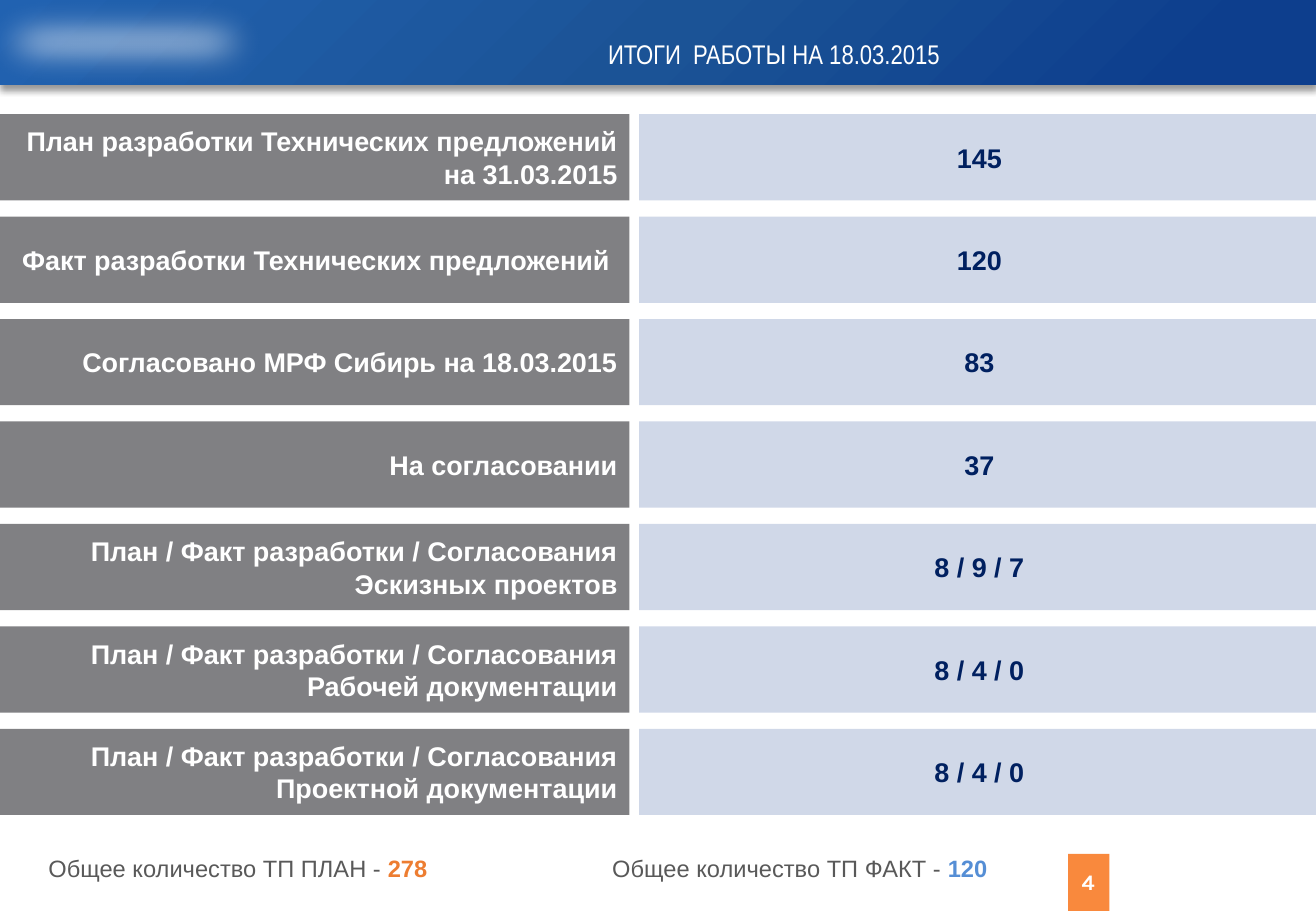
from lxml import etree
from pptx import Presentation
from pptx.dml.color import RGBColor as Rgb
from pptx.enum.shapes import MSO_SHAPE as Shape
from pptx.enum.text import MSO_ANCHOR as Anchor, MSO_AUTO_SIZE as Auto, PP_ALIGN as Align
from pptx.oxml import parse_xml
from pptx.util import Inches, Pt

NS = 'xmlns:a="http://schemas.openxmlformats.org/drawingml/2006/main"'
COLORS = {
    "white": "FFFFFF", "gray": "808083", "pale": "D0D8E8", "navy": "002060",
    "text": "595959", "orange": "ED7D31", "sky": "558ED5", "badge": "F9893D",
    "deep": "0D3E8D", "mid": "1B5396", "light": "2162B1",
}
ROWS = [
    ("План разработки Технических предложений на 31.03.2015", "145"),
    ("Факт разработки Технических предложений ", "120"),
    ("Согласовано МРФ Сибирь на 18.03.2015", "83"),
    ("На согласовании", "37"),
    ("План / Факт разработки / Согласования Эскизных проектов", "8 / 9 / 7"),
    ("План / Факт разработки / Согласования Рабочей документации", "8 / 4 / 0"),
    ("План / Факт разработки / Согласования Проектной документации", "8 / 4 / 0"),
]


def style(run, size, color, bold=False, face="Arial"):
    """Format one run."""
    font = run.font
    font.size, font.bold, font.name = Pt(size), bold, face
    font.color.rgb = Rgb.from_string(COLORS[color])


def add_rect(slide, box, color):
    """Add a plain filled rectangle."""
    rect = slide.shapes.add_shape(Shape.RECTANGLE, *map(Inches, box))
    rect.shadow.inherit = False
    rect.fill.solid()
    rect.fill.fore_color.rgb = Rgb.from_string(COLORS[color])
    rect.line.fill.background()
    return rect


def add_text(slide, box, text, align, *look):
    """Add a text box with one run."""
    label = slide.shapes.add_textbox(*map(Inches, box))
    para = label.text_frame.paragraphs[0]
    para.text, para.alignment = text, align
    style(para.runs[0], *look)
    return label


def set_effect(shape, xml):
    """Put an effect on a shape."""
    effects = shape._element.spPr.find("{*}effectLst")
    effects.append(parse_xml(xml))


def add_header(slide, box):
    """Draw the gradient band with its soft glow and title."""
    left, top, width, height = box
    band = add_rect(slide, box, "deep")
    stops = "".join(
        f'<a:gs pos="{pos}000"><a:srgbClr val="{COLORS[name]}"/></a:gs>'
        for pos, name in ((9, "deep"), (50, "mid"), (100, "light")))
    props = band._element.spPr
    props.replace(props.find("{*}solidFill"), parse_xml(
        f'<a:gradFill {NS} rotWithShape="1"><a:gsLst>{stops}</a:gsLst>'
        '<a:path path="circle"><a:fillToRect l="100000" t="100000"/></a:path></a:gradFill>'))
    set_effect(band, f'<a:outerShdw {NS} blurRad="{Pt(4)}" dist="{Pt(3)}" dir="5400000" '
               'algn="t" rotWithShape="0"><a:srgbClr val="000000"><a:alpha val="40000"/>'
               '</a:srgbClr></a:outerShdw>')
    glow = add_rect(slide, (left - 0.33, top - 0.14, 2.71, height + 0.28), "white")
    set_effect(glow, f'<a:softEdge {NS} rad="{Inches(0.35)}"/>')
    title = add_text(slide, (left + 2.31, top, 8.12, height - 0.07),
                     "ИТОГИ  РАБОТЫ НА 18.03.2015", Align.CENTER, 16, "white", False,
                     "Arial Narrow")
    frame = title.text_frame
    frame.word_wrap, frame.vertical_anchor = True, Anchor.BOTTOM
    frame.paragraphs[0].line_spacing = 0.9


def add_bar(slide, box, text, fill, color, align):
    """Draw one filled bar with bold text."""
    bar = add_rect(slide, box, fill)
    frame = bar.text_frame
    frame.text = text
    frame.word_wrap, frame.vertical_anchor = True, Anchor.MIDDLE
    frame.paragraphs[0].alignment = align
    style(frame.paragraphs[0].runs[0], 16, color, True)


def add_rows(slide, box):
    """Draw the label and value bars at an equal pitch."""
    left, top, width, height = box
    bar, split, gap = 0.71, 5.18, 0.08
    pitch = (height - bar) / (len(ROWS) - 1)
    for i, (name, value) in enumerate(ROWS):
        y = top + i * pitch
        add_bar(slide, (left, y, split, bar), name, "gray", "white", Align.RIGHT)
        add_bar(slide, (left + split + gap, y, width - split - gap, bar),
                value, "pale", "navy", Align.CENTER)


def add_total(slide, box, text, value, color):
    """Write a total with a coloured figure."""
    label = add_text(slide, box, text, Align.LEFT, 14, "text")
    frame = label.text_frame
    frame.word_wrap, frame.auto_size = False, Auto.SHAPE_TO_FIT_TEXT
    run = frame.paragraphs[0].add_run()
    run.text = value
    style(run, 14, color, True)


def add_footer(slide, box):
    """Place both totals and the page badge."""
    left, top, width, height = box
    add_rect(slide, (left + 8.79, top + 0.05, 0.34, height - 0.05), "badge")
    page = add_text(slide, (left + 8.68, top + 0.12, 0.55, 0.33), "4",
                    Align.CENTER, 13, "white", True, "Karla")
    page.text_frame.word_wrap = True
    add_total(slide, (left + 0.3, top, 3.34, 0.34),
              "Общее количество ТП ПЛАН - ", "278", "orange")
    add_total(slide, (left + 4.94, top, 3.3, 0.34),
              "Общее количество ТП ФАКТ - ", "120", "sky")


def main():
    """Build and save the slide."""
    deck = Presentation()
    deck.slide_width, deck.slide_height = Inches(10.83), Inches(7.5)
    slide = deck.slides.add_slide(deck.slide_layouts[6])
    add_header(slide, (0, 0, 10.83, 0.7))
    add_rows(slide, (0, 0.94, 10.86, 5.77))
    add_footer(slide, (0, 6.98, 10.83, 0.52))
    deck.save("out.pptx")


if __name__ == "__main__":
    main()
